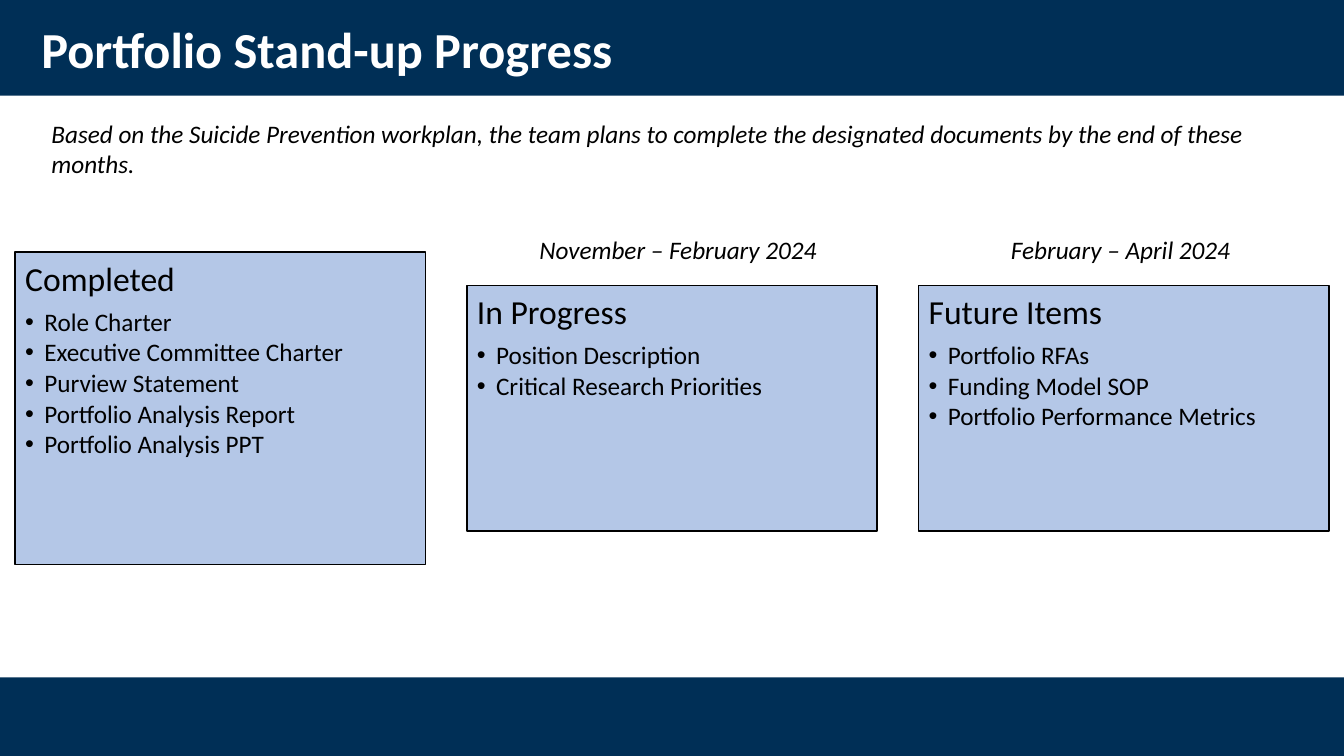
import pptx
import pptx.dml.color
import pptx.enum.shapes
import pptx.enum.text
import pptx.oxml.ns
import pptx.util
from dataclasses import dataclass
from lxml import etree
from pptx.enum.text import MSO_ANCHOR, PP_ALIGN

PX = 9144  # 100 px to the inch
SLIDE_WIDTH, SLIDE_HEIGHT = 1333, 750
CARD_LEFT, CARD_WIDTH, CARD_PITCH = 15, 407, 448
CARD_INSET, BULLET_INDENT = 10, 19
FONT = "Calibri"
COLORS = {"navy": "002F56", "card": "B4C7E7", "black": "000000", "white": "FFFFFF"}


@dataclass(frozen=True)
class Box:
    left: int
    top: int
    width: int
    height: int


@dataclass(frozen=True)
class Stage:
    heading: str
    items: tuple[str, ...]
    top: int
    height: int


@dataclass(frozen=True)
class Period:
    months: str
    left: int


BANDS = (Box(0, 0, SLIDE_WIDTH, 95), Box(0, 672, SLIDE_WIDTH, SLIDE_HEIGHT - 672))
STAGES = (
    Stage("Completed", ("Role Charter", "Executive Committee Charter", "Purview Statement",
                        "Portfolio Analysis Report", "Portfolio Analysis PPT"), 250, 310),
    Stage("In Progress", ("Position Description", "Critical Research Priorities"), 283, 244),
    Stage("Future Items", ("Portfolio RFAs", "Funding Model SOP",
                           "Portfolio Performance Metrics"), 283, 244),
)
PERIODS = (Period("November – February 2024", 519), Period("February – April 2024", 958))


def rgb(name: str) -> pptx.dml.color.RGBColor:
    return pptx.dml.color.RGBColor.from_string(COLORS[name])


def place(shape, box: Box) -> None:
    shape.left, shape.top = box.left * PX, box.top * PX
    shape.width, shape.height = box.width * PX, box.height * PX


def prepare_frame(frame, anchor=MSO_ANCHOR.TOP) -> None:
    frame.word_wrap = True
    frame.auto_size = pptx.enum.text.MSO_AUTO_SIZE.NONE
    frame.vertical_anchor = anchor


def set_bullet(paragraph, indent: int, char: str = "") -> None:
    """Set a hanging bullet, or none when char is empty."""
    properties = paragraph._p.get_or_add_pPr()
    properties.set("marL", str(indent * PX))
    properties.set("indent", str(-indent * PX))
    bullet = etree.SubElement(properties, pptx.oxml.ns.qn("a:buChar" if char else "a:buNone"))
    if char:
        bullet.set("char", char)


def write(paragraph, text: str, size: int, color: str = "black", bold: bool = False,
          italic: bool = False, align=PP_ALIGN.LEFT, spacing: float = 1.0,
          after: float = 0) -> None:
    paragraph.alignment = align
    paragraph.line_spacing = spacing
    paragraph.space_before = pptx.util.Pt(0)
    paragraph.space_after = pptx.util.Pt(after)
    run = paragraph.add_run()
    run.text = text
    run.font.name = FONT
    run.font.size = pptx.util.Pt(size)
    run.font.bold = bold
    run.font.italic = italic
    run.font.color.rgb = rgb(color)


def add_band(slide, box: Box):
    band = slide.shapes.add_shape(pptx.enum.shapes.MSO_SHAPE.RECTANGLE, 0, 0, 0, 0)
    place(band, box)
    band.shadow.inherit = False
    band.fill.solid()
    band.fill.fore_color.rgb = rgb("navy")
    band.line.fill.background()
    return band


def fill_card(card, stage: Stage, left: int) -> None:
    place(card, Box(left, stage.top, CARD_WIDTH, stage.height))
    card.fill.solid()
    card.fill.fore_color.rgb = rgb("card")
    card.line.color.rgb = rgb("black")
    card.line.width = pptx.util.Pt(1)
    frame = card.text_frame
    prepare_frame(frame)
    frame.margin_left = frame.margin_right = CARD_INSET * PX
    frame.margin_top = frame.margin_bottom = CARD_INSET * PX
    heading = frame.paragraphs[0]
    set_bullet(heading, 0)
    write(heading, stage.heading, 24, spacing=0.9, after=8)
    for item in stage.items:
        entry = frame.add_paragraph()
        entry.level = 1
        set_bullet(entry, BULLET_INDENT, "•")
        write(entry, item, 18, spacing=0.9, after=2.4)


def add_period(slide, period: Period) -> None:
    caption = slide.shapes.add_textbox(0, 0, 0, 0)
    place(caption, Box(period.left, 228, 307, 40))
    prepare_frame(caption.text_frame)
    write(caption.text_frame.paragraphs[0], period.months, 18, italic=True,
          align=PP_ALIGN.CENTER)


def main() -> None:
    deck = pptx.Presentation()
    deck.slide_width, deck.slide_height = SLIDE_WIDTH * PX, SLIDE_HEIGHT * PX
    comparison_layout = deck.slide_layouts[4]
    slide = deck.slides.add_slide(comparison_layout)
    title, *cards, intro = slide.placeholders

    # The bands lie behind every placeholder.
    for band_box in BANDS:
        title.element.addprevious(add_band(slide, band_box).element)

    place(title, Box(31, 18, 1150, 68))
    prepare_frame(title.text_frame, MSO_ANCHOR.MIDDLE)
    write(title.text_frame.paragraphs[0], "Portfolio Stand-up Progress", 36, "white",
          bold=True, spacing=0.9)

    for column, (card, stage) in enumerate(zip(cards, STAGES)):
        fill_card(card, stage, CARD_LEFT + column * CARD_PITCH)

    place(intro, Box(41, 112, 1270, 71))
    prepare_frame(intro.text_frame)
    summary = intro.text_frame.paragraphs[0]
    set_bullet(summary, 0)
    write(summary, "Based on the Suicide Prevention workplan, the team plans to complete "
          "the designated documents by the end of these months.", 18, italic=True)

    for period in PERIODS:
        add_period(slide, period)
    deck.save("out.pptx")


if __name__ == "__main__":
    main()
